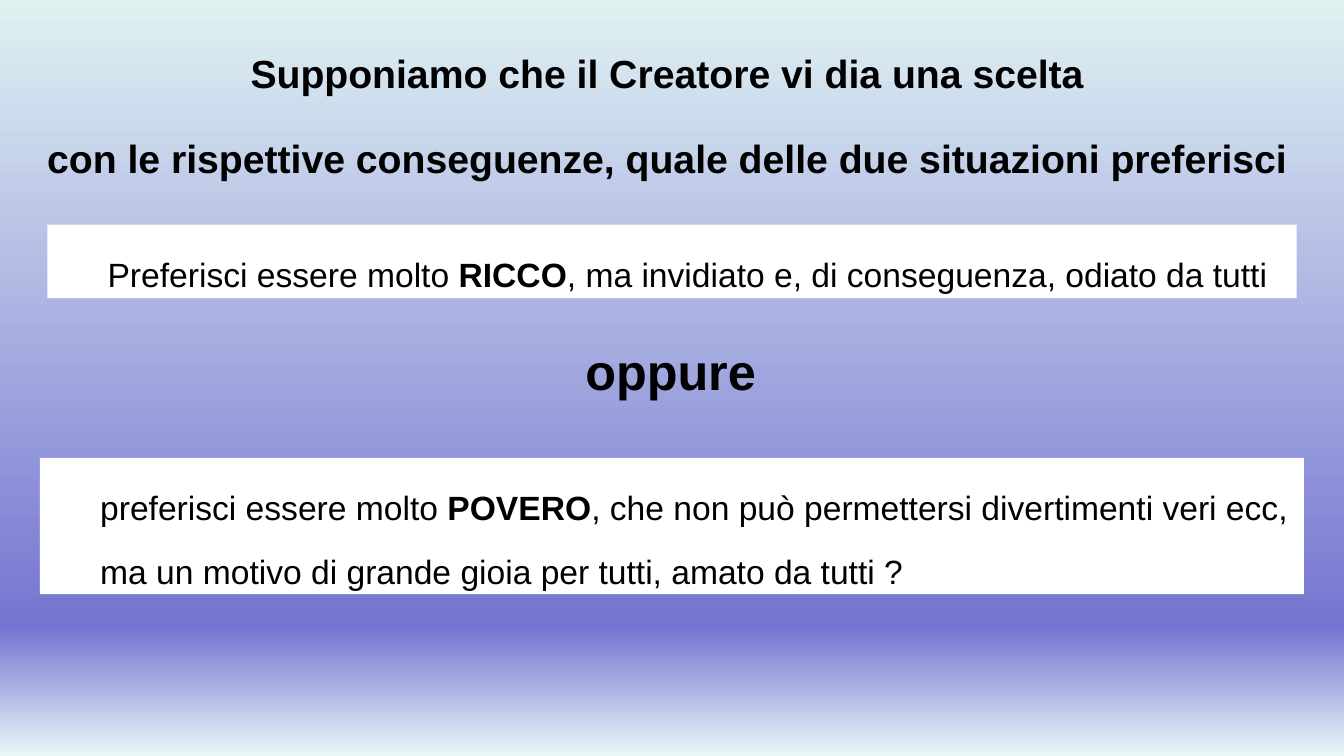
from copy import deepcopy
from dataclasses import dataclass

from pptx import Presentation
from pptx.dml.color import RGBColor
from pptx.enum.shapes import MSO_SHAPE
from pptx.enum.text import MSO_ANCHOR, MSO_AUTO_SIZE, PP_ALIGN
from pptx.oxml.ns import qn
from pptx.slide import Slide
from pptx.text.text import TextFrame
from pptx.util import Pt

RECTANGLE = MSO_SHAPE.RECTANGLE
TOP = MSO_ANCHOR.TOP
NO_FIT = MSO_AUTO_SIZE.NONE
CENTER = PP_ALIGN.CENTER
LEFT = PP_ALIGN.LEFT

BLACK = RGBColor(0x00, 0x00, 0x00)
WHITE = RGBColor(0xFF, 0xFF, 0xFF)
SKY = RGBColor(0xE0, 0xF1, 0xF2)
VIOLET = RGBColor(0x75, 0x75, 0xD1)
MIST = RGBColor(0xEB, 0xF6, 0xF7)

FONT = "Arial"
PX = 9525
TITLE_ONLY = 5
CHOICE_MARGIN = 78
CHOICE_INDENT = -30


@dataclass(frozen=True)
class Area:
    left: int
    top: int
    width: int
    height: int

    def emu(self) -> tuple[int, int, int, int]:
        return self.left * PX, self.top * PX, self.width * PX, self.height * PX


@dataclass(frozen=True)
class Span:
    text: str
    bold: bool = False


@dataclass(frozen=True)
class Choice:
    area: Area
    lines: tuple[tuple[Span, ...], ...]


@dataclass(frozen=True)
class Stop:
    position: float
    color: RGBColor


BACKGROUND = (Stop(0, SKY), Stop(0.83, VIOLET), Stop(1, MIST))

TITLE_AREA = Area(32, 20, 1217, 159)
TITLE_LINES = (
    (Span("Supponiamo che il Creatore vi dia una scelta ", True),),
    (Span("con le rispettive conseguenze, quale delle due situazioni preferisci ", True),),
)

OR_AREA = Area(548, 319, 183, 68)
OR_LINES = ((Span("oppure", True),),)

CHOICES = (
    Choice(Area(45, 214, 1190, 70), (
        (
            Span("Preferisci essere molto "),
            Span("RICCO", True),
            Span(", ma invidiato e, di conseguenza, odiato da tutti"),
        ),
    )),
    Choice(Area(38, 436, 1204, 130), (
        (
            Span("preferisci essere molto "),
            Span("POVERO", True),
            Span(", che non può permettersi divertimenti veri ecc,"),
        ),
        (Span("ma un motivo di grande gioia per tutti, amato da tutti ?"),),
    )),
)


def paint_background(page: Slide) -> None:
    fill = page.background.fill
    fill.gradient()
    fill.gradient_angle = 270
    stop_list = page.element.find(".//" + qn("a:gsLst"))
    stop_list.append(deepcopy(stop_list[-1]))
    for gradient_stop, stop in zip(fill.gradient_stops, BACKGROUND):
        gradient_stop.position = stop.position
        gradient_stop.color.rgb = stop.color


def write_lines(
    frame: TextFrame,
    lines: tuple[tuple[Span, ...], ...],
    size: int,
    align: PP_ALIGN = LEFT,
    spacing: float = 1.0,
    before: int = 0,
) -> None:
    frame.auto_size = NO_FIT
    frame.vertical_anchor = TOP
    for index, spans in enumerate(lines):
        para = frame.add_paragraph() if index else frame.paragraphs[0]
        para.alignment = align
        para.line_spacing = spacing
        para.space_before = Pt(before)
        for span in spans:
            run = para.add_run()
            run.text = span.text
            run.font.name = FONT
            run.font.size = Pt(size)
            run.font.bold = span.bold
            run.font.color.rgb = BLACK


def add_title(page: Slide) -> None:
    title = page.shapes.title
    title.left, title.top, title.width, title.height = TITLE_AREA.emu()
    title.text_frame.word_wrap = True
    write_lines(title.text_frame, TITLE_LINES, 28, CENTER, 1.5, 10)


def add_or(page: Slide) -> None:
    box = page.shapes.add_textbox(*OR_AREA.emu())
    box.text_frame.word_wrap = False
    write_lines(box.text_frame, OR_LINES, 36)


def add_choice(page: Slide, choice: Choice) -> None:
    box = page.shapes.add_shape(RECTANGLE, *choice.area.emu())
    box.shadow.inherit = False
    box.fill.solid()
    box.fill.fore_color.rgb = WHITE
    box.line.fill.background()
    box.text_frame.word_wrap = True
    write_lines(box.text_frame, choice.lines, 24, spacing=1.6)
    for para in box.text_frame.paragraphs:
        para.level = 1
        properties = para._p.get_or_add_pPr()
        properties.set("marL", str(CHOICE_MARGIN * PX))
        properties.set("indent", str(CHOICE_INDENT * PX))


def main() -> None:
    deck = Presentation()
    deck.slide_width = 1280 * PX
    deck.slide_height = 720 * PX
    page = deck.slides.add_slide(deck.slide_layouts[TITLE_ONLY])
    paint_background(page)
    add_title(page)
    for choice in CHOICES:
        add_choice(page, choice)
    add_or(page)
    deck.save("out.pptx")


if __name__ == "__main__":
    main()
